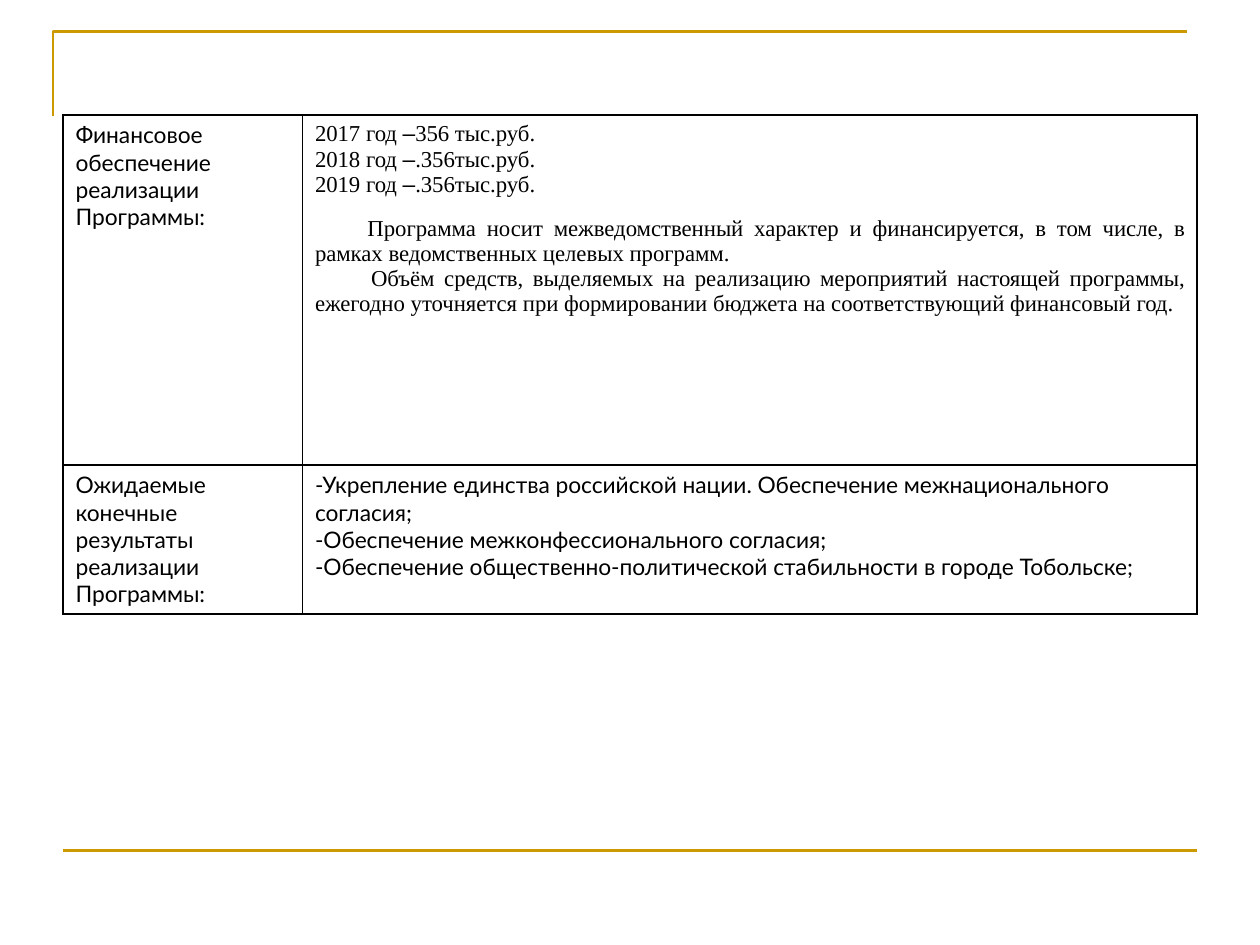
"""Build the programme slide with its funding and expected results table."""
from lxml.etree import SubElement
from pptx import Presentation
from pptx.dml.color import RGBColor
from pptx.enum.shapes import MSO_CONNECTOR as Connector
from pptx.enum.text import PP_ALIGN as Align
from pptx.oxml.ns import qn
from pptx.util import Pt

COLORS = {"gold": "CC9900", "black": "000000"}
SERIF = "Times New Roman"
SANS = "Lato"


def style_line(line, color, width):
    line.color.rgb = RGBColor.from_string(COLORS[color])
    line.width = Pt(width)


def add_border(properties, side):
    border = SubElement(properties, qn(f"a:{side}"), w=str(Pt(1)))
    fill = SubElement(border, qn("a:solidFill"))
    SubElement(fill, qn("a:srgbClr"), val=COLORS["black"])


presentation = Presentation()
presentation.slide_width, presentation.slide_height = Pt(720), Pt(540)
slide = presentation.slides.add_slide(presentation.slide_layouts[6])

builder = slide.shapes.build_freeform(Pt(30.24), Pt(66.24))
builder.add_line_segments([(Pt(30.24), Pt(18)), (Pt(678.24), Pt(18))], close=False)
corner = builder.convert_to_shape()
corner.shadow.inherit = False
corner.fill.background()
style_line(corner.line, "gold", 1.5)

footer_line = slide.shapes.add_connector(Connector.STRAIGHT, Pt(36), Pt(486), Pt(684), Pt(486))
style_line(footer_line.line, "gold", 1.5)
SubElement(footer_line._element.spPr, qn("a:effectLst"))

years = [("2017", "356 тыс.руб."), ("2018", ".356тыс.руб."), ("2019", ".356тыс.руб.")]
funding = [
    ([(f"{year} год ", SERIF), ("–", "Arial"), (amount, SERIF)], Align.JUSTIFY, 0, 0)
    for year, amount in years
] + [
    ([("Программа носит межведомственный характер и финансируется, в том числе, "
       "в рамках ведомственных целевых программ.", SERIF)], Align.JUSTIFY, 30, 10.8),
    ([("Объём средств, выделяемых на реализацию мероприятий настоящей программы, ежегодно "
       "уточняется при формировании бюджета на соответствующий финансовый год.", SERIF)],
     Align.JUSTIFY, 32, 0),
]
results = [
    ([(text, SANS)], Align.LEFT, 0, 0)
    for text in (
        "-Укрепление единства российской нации. Обеспечение межнационального согласия;",
        "-Обеспечение межконфессионального согласия;",
        "-Обеспечение общественно-политической стабильности в городе Тобольске;",
    )
]
headings = [
    [([(text, SANS)], Align.JUSTIFY, 0, 0)]
    for text in (
        "Финансовое обеспечение реализации Программы:",
        "Ожидаемые конечные результаты реализации Программы:",
    )
]
rows = list(zip(headings, (funding, results)))

table = slide.shapes.add_table(2, 2, Pt(36), Pt(65.7), Pt(648), Pt(285)).table
for column, width in zip(table.columns, (136.8, 511.2)):
    column.width = Pt(width)
for row, height in zip(table.rows, (200, 85)):
    row.height = Pt(height)

for row, contents in zip(table.rows, rows):
    for cell, paragraphs in zip(row.cells, contents):
        cell.margin_left = cell.margin_right = Pt(7.2)
        cell.margin_top = cell.margin_bottom = Pt(3.6)
        properties = cell._tc.get_or_add_tcPr()
        for side in ("lnL", "lnR", "lnT", "lnB"):
            add_border(properties, side)
        cell.fill.background()
        frame = cell.text_frame
        for index, (runs, alignment, indent, gap) in enumerate(paragraphs):
            paragraph = frame.add_paragraph() if index else frame.paragraphs[0]
            paragraph.alignment = alignment
            paragraph.space_before = Pt(gap)
            paragraph.font.size = Pt(13)
            paragraph.font.color.rgb = RGBColor.from_string(COLORS["black"])
            if indent:
                paragraph._p.get_or_add_pPr().set("indent", str(Pt(indent)))
            if len(runs) == 1:
                paragraph.font.name = runs[0][1]
            for text, font_name in runs:
                run = paragraph.add_run()
                run.text = text
                if len(runs) > 1:
                    run.font.name = font_name

presentation.save("out.pptx")
